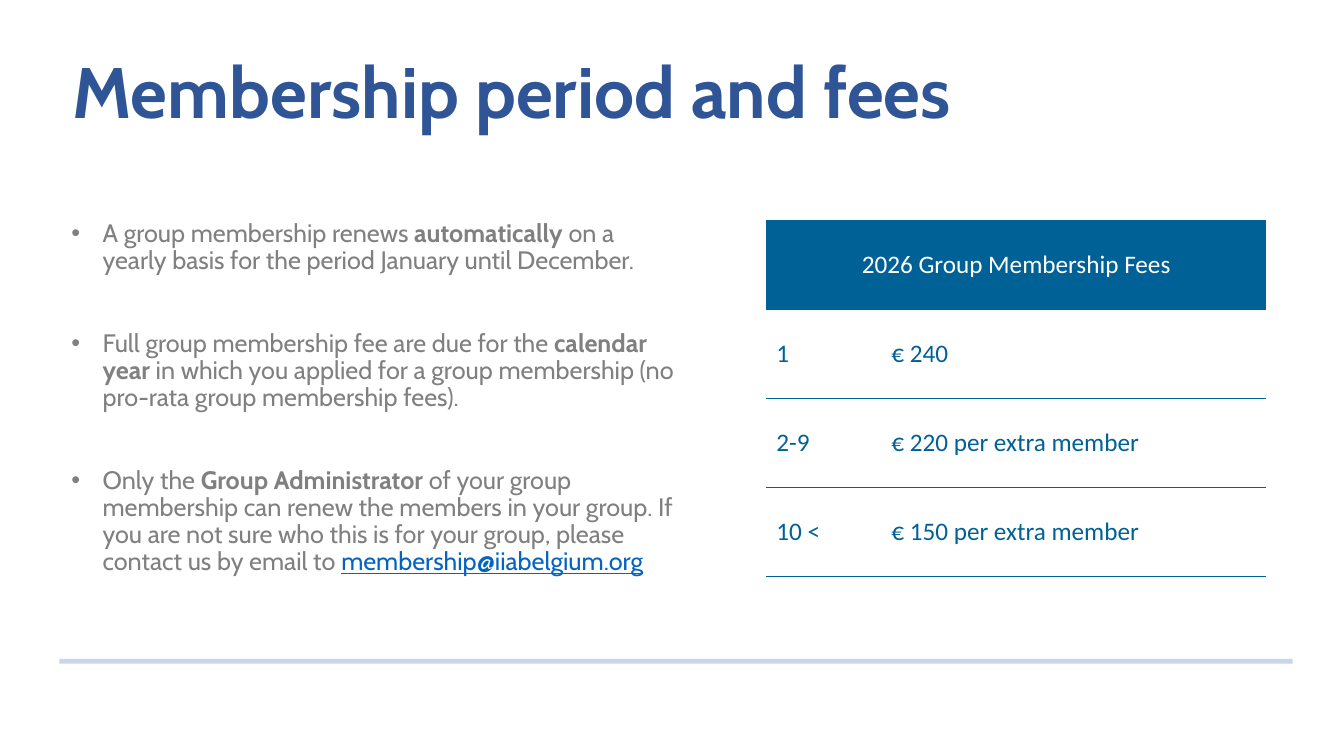
from lxml import etree
from pptx import Presentation, util as u
from pptx.dml.color import RGBColor
from pptx.enum import shapes, text
from pptx.oxml.ns import qn

WIDTH, HEIGHT = 13.33, 7.5
NAVY, GREY, TEAL, LINK, RULE, WHITE = (
    "2F5597", "808080", "006197", "0563C1", "ABC0E4", "FFFFFF")

POINTS = [
    [("A group membership renews ", ""), ("automatically ", "bold"),
     ("on a yearly basis for the period January until December.", "")],
    [("Full group membership fee are due for the ", ""), ("calendar year ", "bold"),
     ("in which you applied for a group membership (no pro-rata group membership fees).", "")],
    [("Only the ", ""), ("Group Administrator ", "bold"),
     ("of your group membership can renew the members in your group. If you are not sure "
      "who this is for your group, please contact us by email to ", ""),
     ("membership@iiabelgium.org", "link")],
]
FEES = [("1", "€ 240"), ("2-9", "€ 220 per extra member"), ("10 <", "€ 150 per extra member")]


def colour(value):
    return RGBColor.from_string(value)


def add_span(para, words, size, font, tint, bold=False, underline=False):
    span = para.add_run()
    span.text = words
    span.font.size, span.font.name = u.Pt(size), font
    span.font.bold, span.font.underline = bold, underline
    span.font.color.rgb = colour(tint)


def add_text_box(page, box, anchor):
    frame = page.shapes.add_textbox(*map(u.Inches, box)).text_frame
    frame.word_wrap = True
    frame.vertical_anchor = anchor
    return frame


def add_title(page, box):
    para = add_text_box(page, box, text.MSO_ANCHOR.MIDDLE).paragraphs[0]
    para.line_spacing = 0.9
    add_span(para, "Membership period and fees", 51, "Cabin", NAVY, bold=True)


def add_points(page, box):
    frame = add_text_box(page, box, text.MSO_ANCHOR.TOP)
    for index, point in enumerate(POINTS):
        para = frame.add_paragraph() if index else frame.paragraphs[0]
        para.line_spacing = 0.9
        para.space_before = u.Pt(39.5 if index else 0)
        # Hanging bullet
        props = para._p.get_or_add_pPr()
        props.set("marL", str(u.Inches(0.31)))
        props.set("indent", str(u.Inches(-0.31)))
        etree.SubElement(props, qn("a:buFont"), typeface="Arial")
        etree.SubElement(props, qn("a:buChar"), char="•")
        for words, kind in point:
            add_span(para, words, 18, "Cabin", LINK if kind == "link" else GREY,
                     bold=kind == "bold", underline=kind == "link")


def set_borders(cell):
    props = cell._tc.get_or_add_tcPr()
    for side in ("lnL", "lnR", "lnT", "lnB"):
        line = etree.SubElement(props, qn(f"a:{side}"), w=str(u.Pt(0.6)))
        if side in ("lnT", "lnB"):
            fill = etree.SubElement(line, qn("a:solidFill"))
            etree.SubElement(fill, qn("a:srgbClr"), val=TEAL)
        else:
            etree.SubElement(line, qn("a:noFill"))


def add_fee_table(page, box):
    left, top, width, height = box
    rows = [("2026 Group Membership Fees", "")] + FEES
    table = page.shapes.add_table(len(rows), 2, *map(u.Inches, box)).table
    table.first_row = table.horz_banding = False
    for column, share in zip(table.columns, (0.23, 0.77)):
        column.width = u.Inches(width * share)
    for r, row in enumerate(rows):
        table.rows[r].height = u.Inches(height / len(rows))
        for c, words in enumerate(row):
            cell = table.cell(r, c)
            cell.vertical_anchor = text.MSO_ANCHOR.MIDDLE
            set_borders(cell)
            if r == 0:
                cell.fill.solid()
                cell.fill.fore_color.rgb = colour(TEAL)
            else:
                cell.fill.background()
            if words:
                add_span(cell.text_frame.paragraphs[0], words, 18, "Calibri",
                         TEAL if r else WHITE)
    # Heading across both columns
    heading = table.cell(0, 0)
    heading.merge(table.cell(0, 1))
    heading.text_frame.paragraphs[0].alignment = text.PP_ALIGN.CENTER


def add_footer_rule(page, box):
    left, top, width, _ = box
    rule = page.shapes.add_connector(
        shapes.MSO_CONNECTOR.STRAIGHT,
        *map(u.Inches, (left, top, left + width, top)))
    rule.line.width = u.Pt(3.5)
    rule.line.color.rgb = colour(RULE)
    # Soft tint, no shadow
    tint = rule.line._ln.find(".//" + qn("a:srgbClr"))
    etree.SubElement(tint, qn("a:alpha"), val="65000")
    etree.SubElement(rule._element.spPr, qn("a:effectLst"))


def main():
    deck = Presentation()
    deck.slide_width, deck.slide_height = u.Inches(WIDTH), u.Inches(HEIGHT)
    page = deck.slides.add_slide(deck.slide_layouts[6])
    add_footer_rule(page, (0.59, 6.56, 12.23, 0))
    add_title(page, (0.62, 0.22, 12.46, 1.45))
    add_points(page, (0.61, 2.14, 6.24, 4.41))
    add_fee_table(page, (7.6, 2.19, 4.96, 3.53))
    deck.save("out.pptx")


if __name__ == "__main__":
    main()
